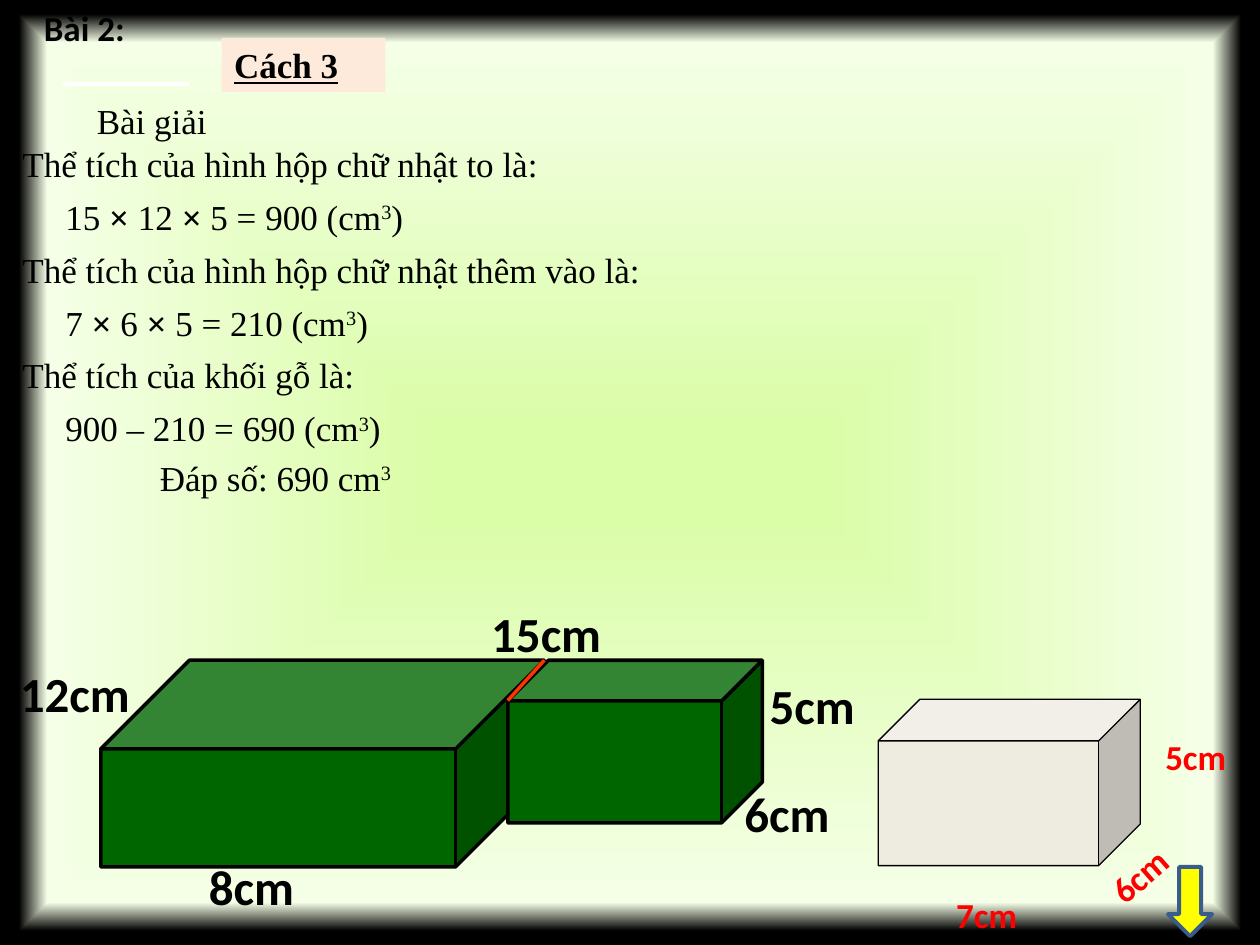
from dataclasses import dataclass

from lxml.etree import SubElement
from pptx import Presentation
from pptx.dml.color import RGBColor
from pptx.enum.shapes import MSO_CONNECTOR as Connector, MSO_SHAPE as Preset
from pptx.enum.text import MSO_AUTO_SIZE as AutoSize, MSO_ANCHOR as Anchor, PP_ALIGN as Align
from pptx.oxml import parse_xml
from pptx.oxml.ns import nsdecls, qn
from pptx.util import Emu, Pt

PX = 9144  # 100 px to the inch
BLACK = RGBColor(0x00, 0x00, 0x00)
WHITE = RGBColor(0xFF, 0xFF, 0xFF)
RED = RGBColor(0xFF, 0x00, 0x00)
ORANGE = RGBColor(0xFF, 0x33, 0x00)
GREEN = RGBColor(0x00, 0x66, 0x00)
CREAM = RGBColor(0xEE, 0xEC, 0xE1)
YELLOW = RGBColor(0xFF, 0xFF, 0x00)
NAVY = RGBColor(0x38, 0x5D, 0x8A)
PEACH = RGBColor(0xFD, 0xEA, 0xDA)
BACKGROUND_STOPS = ((8, "DAFDA7"), (91, "F5FFE7"), (97, "000000"))

SOLUTION = {"name": "Times New Roman", "size": Pt(20), "bold": False}
HEADING = {**SOLUTION, "bold": True, "underline": True}
LARGE = {"name": "Calibri", "size": Pt(28), "bold": True}
SMALL = {**LARGE, "size": Pt(20)}

TIMES, CUBED = "×", "3"


@dataclass
class Solid:
    preset: Preset
    box: tuple[int, int, int, int]
    fill: RGBColor
    edge: RGBColor | None = None
    weight: float = 0
    adjust: float | None = None
    rotation: float = 0


@dataclass
class Label:
    pieces: tuple[str, ...]
    box: tuple[int, int, int, int]
    font: dict
    color: RGBColor = BLACK
    rotation: float = 0
    wrap: bool = True


@dataclass
class Rule:
    start: tuple[int, int]
    end: tuple[int, int]
    color: RGBColor
    weight: float


def emu(*lengths: int) -> list[Emu]:
    return [Emu(length * PX) for length in lengths]


def paint_background(slide) -> None:
    stops = "".join(
        f'<a:gs pos="{place * 1000}"><a:srgbClr val="{color}"/></a:gs>'
        for place, color in BACKGROUND_STOPS
    )
    background = parse_xml(
        f'<p:bg {nsdecls("p", "a")}><p:bgPr><a:gradFill><a:gsLst>{stops}</a:gsLst>'
        '<a:path path="shape"><a:fillToRect l="50000" t="50000" r="50000" b="50000"/>'
        "</a:path></a:gradFill><a:effectLst/></p:bgPr></p:bg>"
    )
    slide.element.cSld.insert(0, background)


def draw_solid(slide, solid: Solid):
    shape = slide.shapes.add_shape(solid.preset, *emu(*solid.box))
    shape.shadow.inherit = False
    shape.rotation = solid.rotation
    shape.fill.solid()
    shape.fill.fore_color.rgb = solid.fill
    if solid.edge is None:
        shape.line.fill.background()
    else:
        shape.line.color.rgb = solid.edge
        shape.line.width = Pt(solid.weight)
    if solid.adjust is not None:
        shape.adjustments[0] = solid.adjust
    return shape


def write(shape, label: Label) -> None:
    frame = shape.text_frame
    frame.word_wrap = label.wrap
    frame.auto_size = AutoSize.SHAPE_TO_FIT_TEXT
    frame.vertical_anchor = Anchor.TOP
    paragraph = frame.paragraphs[0]
    paragraph.alignment = Align.LEFT
    for piece in label.pieces:
        run = paragraph.add_run()
        run.text = piece
        for attribute, value in label.font.items():
            setattr(run.font, attribute, value)
        run.font.color.rgb = label.color
        if piece == TIMES:
            run.font.bold = True
        elif piece == CUBED:
            run.font._element.set("baseline", "30000")


def draw_label(slide, label: Label) -> None:
    shape = slide.shapes.add_textbox(*emu(*label.box))
    shape.rotation = label.rotation
    write(shape, label)


def draw_rule(slide, rule: Rule) -> None:
    line = slide.shapes.add_connector(Connector.STRAIGHT, *emu(*rule.start, *rule.end))
    line.line.color.rgb = rule.color
    line.line.width = Pt(rule.weight)
    SubElement(line._element.spPr, qn("a:effectLst"))


SOLIDS = (
    Solid(Preset.CUBE, (80, 524, 352, 164), GREEN, BLACK, 2, 0.429),
    Solid(Preset.CUBE, (403, 524, 202, 129), GREEN, BLACK, 2, 0.25),
    Solid(Preset.CUBE, (697, 555, 208, 132), CREAM, BLACK, 0.75, 0.25),
    Solid(Preset.RIGHT_ARROW, (917, 698, 55, 35), YELLOW, NAVY, 2.25, 0.5, 90),
)
RULES = (
    Rule((403, 556), (432, 524), ORANGE, 2),
    Rule((50, 67), (150, 67), WHITE, 2.25),
)
LABELS = (
    # Wooden block dimensions
    Label(("12cm",), (6, 522, 150, 41), LARGE),
    Label(("15cm",), (380, 474, 161, 41), LARGE),
    Label(("5cm",), (601, 531, 98, 57), LARGE),
    Label(("6cm",), (581, 617, 91, 57), LARGE),
    Label(("8cm",), (156, 675, 92, 57), LARGE),
    # Added block dimensions
    Label(("7cm",), (749, 704, 97, 43), SMALL, RED),
    Label(("5cm",), (915, 579, 97, 43), SMALL, RED),
    Label(("6cm",), (862, 652, 132, 43), SMALL, RED, 318.7),
    # Exercise number and solution title
    Label(("Bài 2:",), (25, 0, 217, 43), SMALL),
    Label(("Bài giải",), (67, 74, 107, 43), SOLUTION, wrap=False),
    Label(("Đáp số: 690 cm", CUBED), (117, 357, 225, 43), SOLUTION),
)
METHOD = Label(("Cách 3",), (176, 30, 130, 43), HEADING)

# Each step is a statement followed by its calculation
STEPS = (
    ("Thể tích của hình hộp chữ nhật to là:",
     ("15 ", TIMES, " 12 ", TIMES, " 5 = 900 (cm", CUBED, ")")),
    ("Thể tích của hình hộp chữ nhật thêm vào là:",
     ("7 ", TIMES, " 6 ", TIMES, " 5 = 210 (cm", CUBED, ")")),
    ("Thể tích của khối gỗ là:",
     ("900 – 210 = 690 (cm", CUBED, ")")),
)
STEP_TOP, STEP_PITCH, CALCULATION_DROP = 108, 84, 42


def main() -> None:
    deck = Presentation()
    deck.slide_width, deck.slide_height = emu(1000, 750)
    slide = deck.slides.add_slide(deck.slide_layouts[6])
    paint_background(slide)

    # Blocks, seam and arrow
    for solid in SOLIDS:
        draw_solid(slide, solid)
    for rule in RULES:
        draw_rule(slide, rule)

    # Titles and dimensions
    write(draw_solid(slide, Solid(Preset.RECTANGLE, METHOD.box, PEACH)), METHOD)
    for label in LABELS:
        draw_label(slide, label)

    # Solution steps
    for index, (statement, calculation) in enumerate(STEPS):
        top = STEP_TOP + index * STEP_PITCH
        draw_label(slide, Label((statement,), (8, top, 525, 43), SOLUTION))
        draw_label(slide, Label(calculation, (42, top + CALCULATION_DROP, 342, 43), SOLUTION))

    deck.save("out.pptx")


if __name__ == "__main__":
    main()
